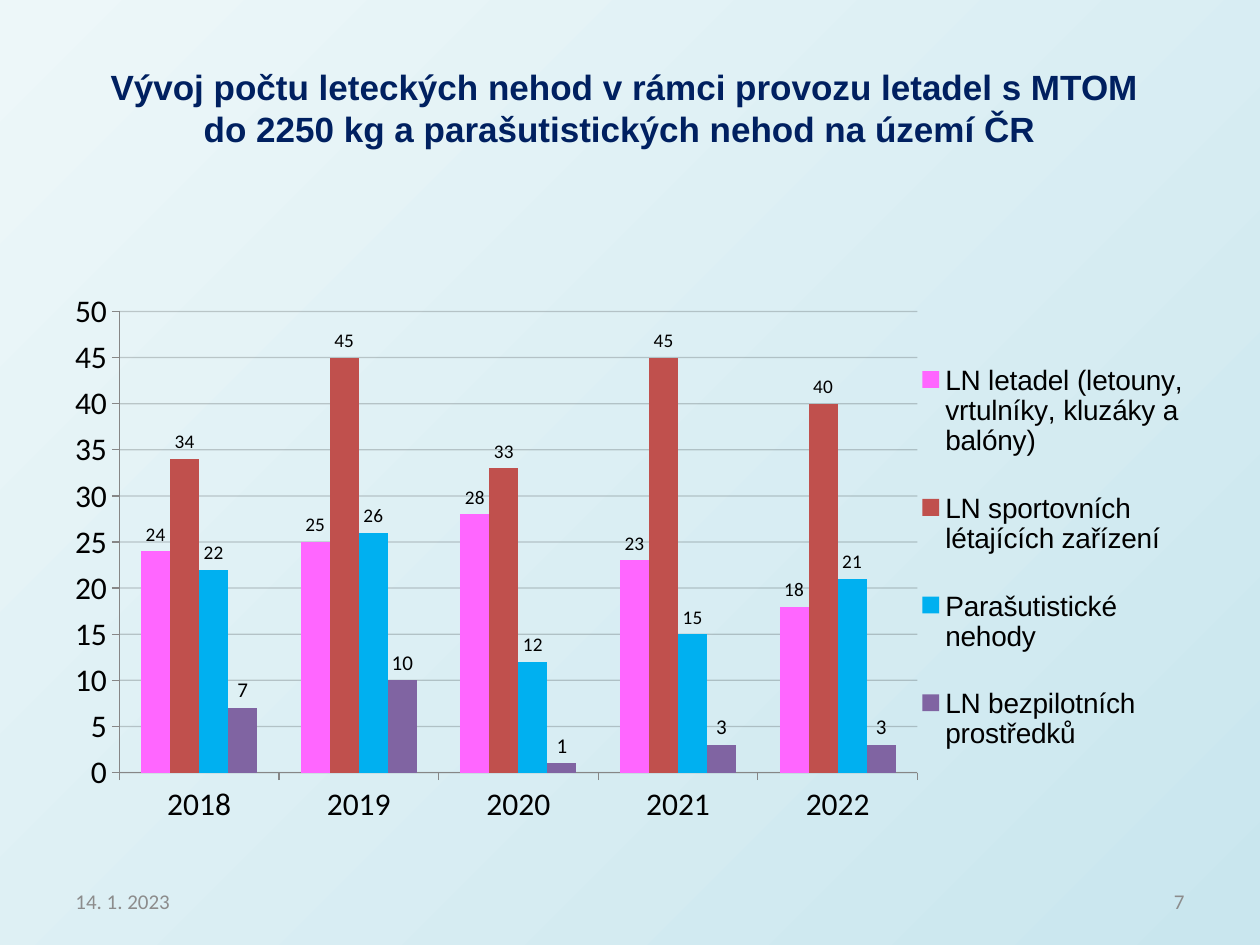
from lxml import etree
from pptx import Presentation
from pptx import util as u
from pptx.chart import data as cd
from pptx.dml.color import RGBColor
from pptx.enum import chart as ch, text
from pptx.oxml import ns

LIGHT = RGBColor(0xED, 0xF7, 0xF9)
DEEP = RGBColor(0xC9, 0xE6, 0xEE)
NAVY = RGBColor(0x00, 0x20, 0x60)
BLACK = RGBColor(0, 0, 0)
GREY = RGBColor(0x8C, 0x8C, 0x8C)
AXIS = RGBColor(0x86, 0x86, 0x86)
PINK = RGBColor(0xFF, 0x66, 0xFF)
RED = RGBColor(0xC0, 0x50, 0x4D)
BLUE = RGBColor(0x00, 0xB0, 0xF0)
PURPLE = RGBColor(0x80, 0x64, 0xA2)

YEARS = ["2018", "2019", "2020", "2021", "2022"]
# name, values, colour, label size
SERIES = [
    ("LN letadel (letouny, vrtulníky, kluzáky a balóny)",
     (24, 25, 28, 23, 18), PINK, 11),
    ("LN sportovních létajících zařízení", (34, 45, 33, 45, 40), RED, 11),
    ("Parašutistické nehody", (22, 26, 12, 15, 21), BLUE, 11),
    ("LN bezpilotních prostředků", (7, 10, 1, 3, 3), PURPLE, 12),
]


def layout(box, inner=False):
    """Manual chart layout; box holds x, y, w, h as shares of the chart."""
    node = etree.Element(ns.qn("c:layout"))
    man = etree.SubElement(node, ns.qn("c:manualLayout"))
    pairs = [("layoutTarget", "inner")] if inner else []
    pairs += [("xMode", "edge"), ("yMode", "edge"), *zip("xywh", box)]
    for tag, val in pairs:
        etree.SubElement(man, ns.qn("c:" + tag), val=str(val))
    return node


class Deck:
    head, body = "Arial", "Calibri"

    def __init__(self):
        self.prs = Presentation()
        self.prs.slide_width, self.prs.slide_height = u.Pt(720), u.Pt(540)
        self.slide = self.prs.slides.add_slide(self.prs.slide_layouts[5])

    def back(self, start, end):
        fill = self.slide.background.fill
        fill.gradient()
        fill.gradient_angle = 315
        for stop, color, pos in zip(fill.gradient_stops, (start, end), (0, 1)):
            stop.color.rgb = color
            stop.position = pos

    def font(self, font, name, size, color, bold=False):
        font.name, font.size, font.bold = name, u.Pt(size), bold
        font.color.rgb = color

    def title(self, words, box):
        shape = self.slide.shapes.title
        shape.left, shape.top, shape.width, shape.height = map(u.Pt, box)
        frame = shape.text_frame
        frame.text = words
        frame.auto_size = text.MSO_AUTO_SIZE.SHAPE_TO_FIT_TEXT
        frame.vertical_anchor = text.MSO_ANCHOR.TOP
        para = frame.paragraphs[0]
        para.alignment = text.PP_ALIGN.CENTER
        para.space_before = u.Pt(4)
        self.font(para.font, self.head, 20, NAVY, True)

    def note(self, words, box, align):
        frame = self.slide.shapes.add_textbox(*map(u.Pt, box)).text_frame
        frame.word_wrap = True
        frame.vertical_anchor = text.MSO_ANCHOR.MIDDLE
        frame.text = words
        para = frame.paragraphs[0]
        para.alignment = align
        self.font(para.font, self.body, 12, GREY)

    def chart(self, box, plot_box, key_box):
        data = cd.CategoryChartData()
        data.categories = YEARS
        for name, vals, *_ in SERIES:
            data.add_series(name, vals)
        chart = self.slide.shapes.add_chart(
            ch.XL_CHART_TYPE.COLUMN_CLUSTERED, *map(u.Pt, box), data).chart
        self.font(chart.font, self.body, 18, BLACK)
        chart.has_title = False

        plot = chart.plots[0]
        plot.gap_width, plot.overlap = 150, 0
        plot.vary_by_categories = False
        for series, (_, _, color, size) in zip(plot.series, SERIES):
            series.format.fill.solid()
            series.format.fill.fore_color.rgb = color
            series.invert_if_negative = False
            labels = series.data_labels
            labels.show_value = True
            labels.position = ch.XL_LABEL_POSITION.OUTSIDE_END
            self.font(labels.font, self.body, size, BLACK)

        for axis in (chart.category_axis, chart.value_axis):
            axis.major_tick_mark = ch.XL_TICK_MARK.OUTSIDE
            axis.minor_tick_mark = ch.XL_TICK_MARK.NONE
            axis.format.line.color.rgb = AXIS
            axis.format.line.width = u.Pt(0.75)
        scale = chart.value_axis
        scale.minimum_scale, scale.maximum_scale = 0, 50
        scale.major_unit = 5
        grid = scale.major_gridlines.format.line
        grid.color.rgb = BLACK
        grid.width = u.Pt(0.75)
        lines = scale.major_gridlines._xAx.find(ns.qn("c:majorGridlines"))
        tint = next(lines.iter(ns.qn("a:srgbClr")))
        etree.SubElement(tint, ns.qn("a:alpha"), val="19000")

        chart.has_legend = True
        key = chart.legend
        key.position = ch.XL_LEGEND_POSITION.RIGHT
        key.include_in_layout = False
        self.font(key.font, self.head, 16, BLACK)
        for old in key._element.findall(ns.qn("c:layout")):
            key._element.remove(old)
        key._element.find(ns.qn("c:legendPos")).addnext(layout(key_box))

        area = next(chart._chartSpace.iter(ns.qn("c:plotArea")))
        for old in area.findall(ns.qn("c:layout")):
            area.remove(old)
        area.insert(0, layout(plot_box, inner=True))


def main():
    deck = Deck()
    deck.back(LIGHT, DEEP)
    deck.note("14. 1. 2023", (36, 500.5, 168, 28.75), text.PP_ALIGN.LEFT)
    deck.note("7", (516, 500.5, 168, 28.75), text.PP_ALIGN.RIGHT)
    deck.chart((31, 162, 652.5, 319.5), (0.057, 0.05, 0.699, 0.825),
               (0.76, 0.08, 0.24, 0.82))
    deck.title("Vývoj počtu leteckých nehod v rámci provozu letadel s MTOM\v"
               "do 2250 kg a parašutistických nehod na území ČR ",
               (39.5, 34, 635, 55.5))
    deck.prs.save("out.pptx")


if __name__ == "__main__":
    main()
